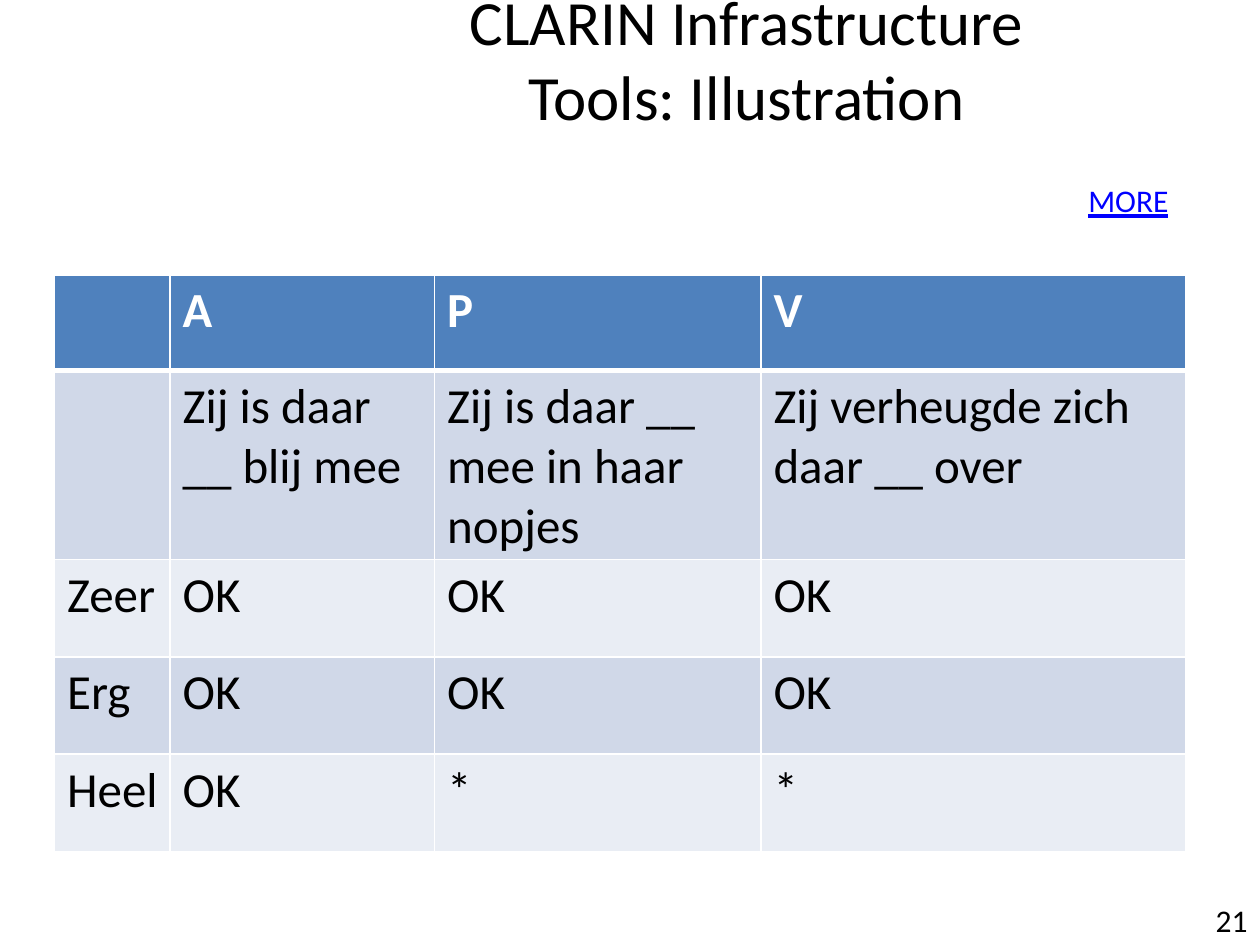
from lxml import etree
from pptx import Presentation
from pptx import util as u
from pptx.dml.color import RGBColor
from pptx.enum import text
from pptx.oxml import ns

COLORS = {
    "black": "000000",
    "white": "FFFFFF",
    "link": "0000FF",
    "header": "4F81BD",
    "band_dark": "D0D8E8",
    "band_light": "E9EDF4",
}

COLUMN_WIDTHS = [2.33, 5.33, 6.58, 8.56]
ROW_HEIGHTS = [1.93, 3.38, 1.96, 1.96, 1.96]
ROWS = [
    ["", "A", "P", "V"],
    ["", "Zij is daar __ blij mee", "Zij is daar __ mee in haar nopjes",
     "Zij verheugde zich daar __ over"],
    ["Zeer", "OK", "OK", "OK"],
    ["Erg", "OK", "OK", "OK"],
    ["Heel", "OK", "*", "*"],
]


def format_font(font, color, **values):
    font.color.rgb = RGBColor.from_string(COLORS[color])
    for name, value in {"name": "Calibri", **values}.items():
        setattr(font, name, value)


def add_text(slide, box, words, size, color="black", align=text.PP_ALIGN.LEFT,
             anchor=text.MSO_ANCHOR.TOP, underline=None):
    shape = slide.shapes.add_textbox(*map(u.Cm, box))
    frame = shape.text_frame
    frame.word_wrap = True
    frame.vertical_anchor = anchor
    frame.text = words
    paragraph = frame.paragraphs[0]
    paragraph.alignment = align
    for run in paragraph.runs:
        format_font(run.font, color, size=u.Pt(size), underline=underline)


def add_borders(cell, widths):
    properties = cell._tc.get_or_add_tcPr()
    for side, width in widths.items():
        line = etree.SubElement(properties, ns.qn(f"a:ln{side}"), w=str(u.Pt(width)))
        fill = etree.SubElement(line, ns.qn("a:solidFill"))
        etree.SubElement(fill, ns.qn("a:srgbClr"), val=COLORS["white"])


def format_cell(cell, words, row):
    header = row == 0
    # The rule below the header is thicker than the others
    add_borders(cell, {"L": 1, "R": 1, "T": 3 if row == 1 else 1, "B": 3 if header else 1})
    band = "header" if header else "band_dark" if row % 2 else "band_light"
    cell.fill.solid()
    cell.fill.fore_color.rgb = RGBColor.from_string(COLORS[band])
    cell.text = words
    format_font(cell.text_frame.paragraphs[0].font, "white" if header else "black",
                size=u.Pt(28), bold=header)


def add_grid(slide, left, top):
    frame = slide.shapes.add_table(
        len(ROWS), len(COLUMN_WIDTHS), u.Cm(left), u.Cm(top),
        u.Cm(sum(COLUMN_WIDTHS)), u.Cm(sum(ROW_HEIGHTS)))
    table = frame.table
    for column, width in zip(table.columns, COLUMN_WIDTHS):
        column.width = u.Cm(width)
    for row, height in zip(table.rows, ROW_HEIGHTS):
        row.height = u.Cm(height)
    for row, values in enumerate(ROWS):
        for column, words in enumerate(values):
            format_cell(table.cell(row, column), words, row)


def main():
    presentation = Presentation()
    presentation.slide_width = u.Cm(25.4)
    presentation.slide_height = u.Cm(19.05)
    slide = presentation.slides.add_slide(presentation.slide_layouts[6])

    # Title
    add_text(slide, (4.7, 0, 20.7, 2.34), "CLARIN Infrastructure\vTools: Illustration", 36,
             align=text.PP_ALIGN.CENTER, anchor=text.MSO_ANCHOR.MIDDLE)

    # Slide number
    add_text(slide, (22.71, 18.03, 2.69, 1.02), "21", 18, align=text.PP_ALIGN.RIGHT)

    # Table of intensifiers
    add_grid(slide, 1.1, 5.54)

    # Link label
    add_text(slide, (21.69, 3.53, 3, 1.02), "MORE", 18, color="link", underline=True)

    presentation.save("out.pptx")


if __name__ == "__main__":
    main()
